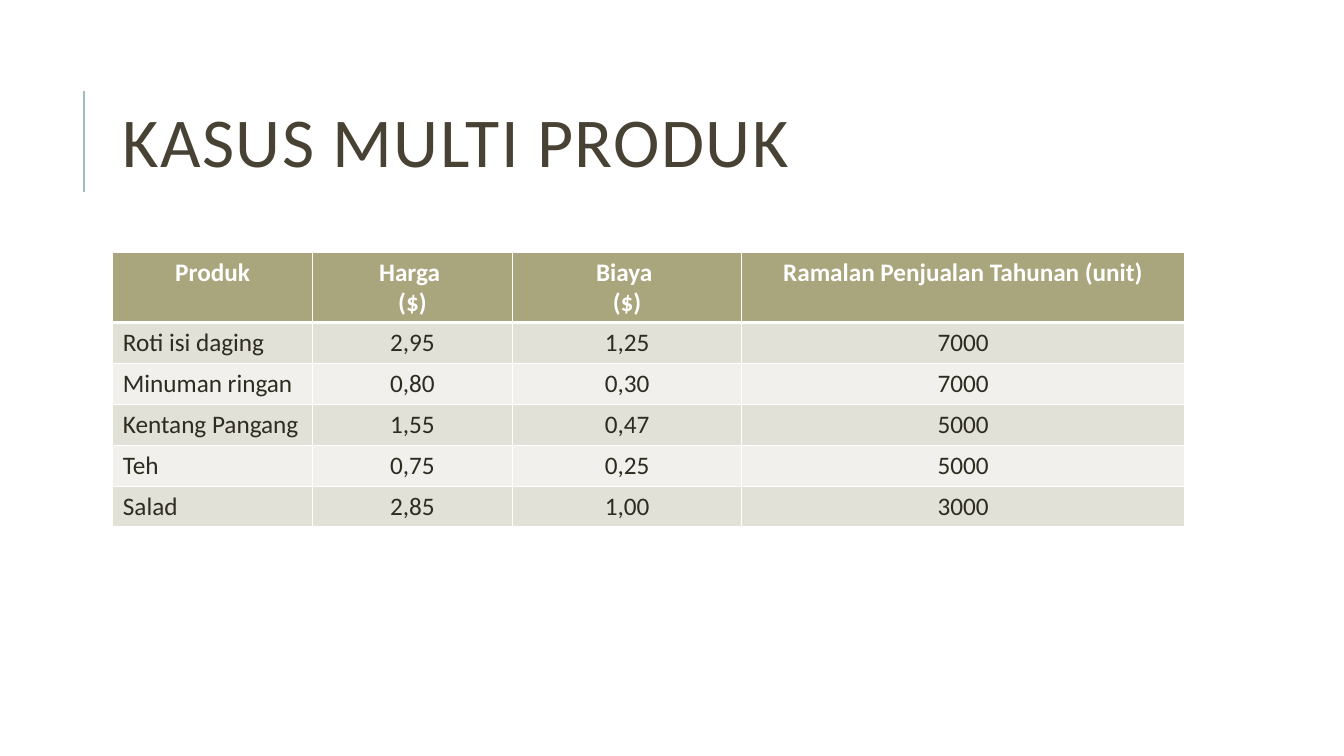
from lxml.etree import SubElement
from pptx import Presentation
from pptx.dml.color import RGBColor
from pptx.enum.shapes import MSO_CONNECTOR as Link
from pptx.enum.text import MSO_ANCHOR as Anchor, PP_ALIGN as Align
from pptx.oxml.ns import qn
from pptx.util import Pt

TITLE = "KASUS MULTI PRODUK"
HEAD = ["Produk", "Harga \n($)", "Biaya \n($)", "Ramalan Penjualan Tahunan (unit)"]
ROWS = [
    ("Roti isi daging", "2,95", "1,25", "7000"),
    ("Minuman ringan", "0,80", "0,30", "7000"),
    ("Kentang Pangang", "1,55", "0,47", "5000"),
    ("Teh", "0,75", "0,25", "5000"),
    ("Salad", "2,85", "1,00", "3000"),
]
WIDTHS = [142.6, 142.9, 163.8, 316.1]
LEFT, TOP, ROW = 80.6, 180, 29.2
WIDE = sum(WIDTHS)
FONT = "Calibri"
WHITE, OLIVE, INK = "FFFFFF", "A9A57C", "2E2B21"
BANDS = ["E2E1D7", "F1F0EC"]


def paint(color, code):
    color.rgb = RGBColor.from_string(code)


def write(para, text, size, code, bold=False):
    run = para.add_run()
    run.text = text
    run.font.name, run.font.size, run.font.bold = FONT, Pt(size), bold
    paint(run.font.color, code)
    return run


def edge(cell, base):
    """Give the cell white borders, the lower one base points wide."""
    props = cell._tc.get_or_add_tcPr()
    sides = {"lnL": 1, "lnR": 1, "lnT": 1, "lnB": base}
    for spot, (side, width) in enumerate(sides.items()):
        line = SubElement(props, qn(f"a:{side}"), w=str(Pt(width)))
        fill = SubElement(line, qn("a:solidFill"))
        SubElement(fill, qn("a:srgbClr"), val=WHITE)
        props.insert(spot, line)


def fill_cell(cell, text, row, col):
    top = row == 0
    cell.fill.solid()
    paint(cell.fill.fore_color, OLIVE if top else BANDS[(row - 1) % 2])
    edge(cell, 3 if top else 1)
    frame = cell.text_frame
    for i, part in enumerate(text.split("\n")):
        para = frame.add_paragraph() if i else frame.paragraphs[0]
        para.alignment = Align.CENTER if top or col else Align.LEFT
        write(para, part, 18, WHITE if top else INK, top)


def add_title(slide):
    rule = slide.shapes.add_connector(
        Link.STRAIGHT, Pt(60), Pt(136.8), Pt(60), Pt(64.8))
    rule.line.width = Pt(1.5)
    paint(rule.line.color, "9CBEBD")
    SubElement(rule._element.spPr, qn("a:effectLst"))

    box = slide.shapes.add_textbox(Pt(LEFT), Pt(46), Pt(WIDE), Pt(118))
    frame = box.text_frame
    frame.word_wrap = True
    frame.vertical_anchor = Anchor.MIDDLE
    para = frame.paragraphs[0]
    para.line_spacing = 0.8
    run = write(para, TITLE, 50, "474233")
    run.font._element.set("spc", "100")


def add_grid(slide):
    data = [HEAD, *ROWS]
    table = slide.shapes.add_table(
        len(data), len(HEAD), Pt(LEFT), Pt(TOP), Pt(WIDE), Pt(ROW * len(data))).table
    for col, width in zip(table.columns, WIDTHS):
        col.width = Pt(width)
    for r, row in enumerate(data):
        table.rows[r].height = Pt(ROW)
        for c, text in enumerate(row):
            fill_cell(table.cell(r, c), text, r, c)


def main():
    deck = Presentation()
    deck.slide_width, deck.slide_height = Pt(960), Pt(540)
    slide = deck.slides.add_slide(deck.slide_layouts[6])
    add_title(slide)
    add_grid(slide)
    deck.save("out.pptx")


if __name__ == "__main__":
    main()
